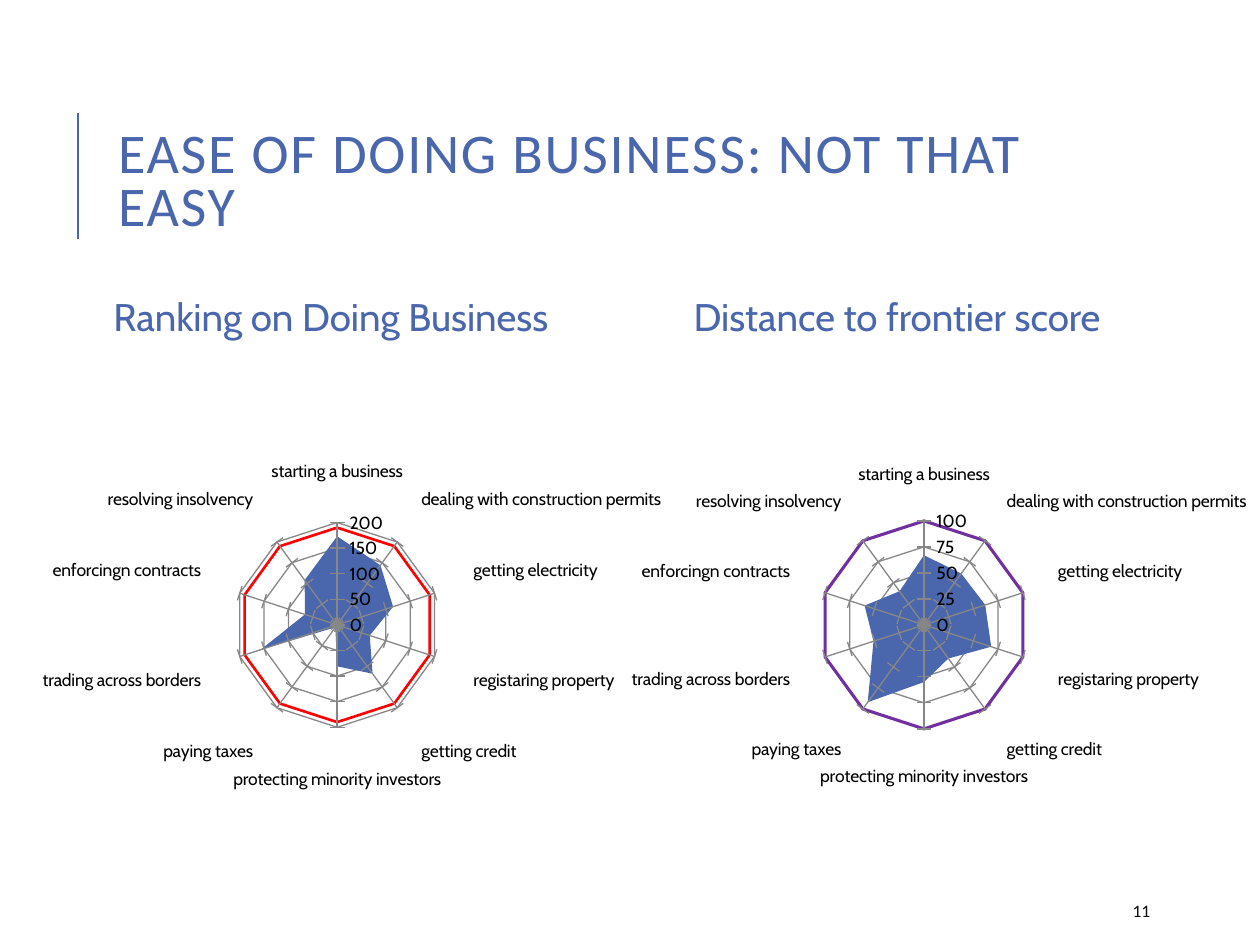
from pptx import Presentation
from pptx.chart.data import CategoryChartData
from pptx.dml.color import RGBColor
from pptx.enum.chart import XL_CHART_TYPE, XL_TICK_MARK
from pptx.enum.text import MSO_ANCHOR, PP_ALIGN
from pptx.oxml.ns import qn
from pptx.util import Inches, Pt
from lxml import etree

BLUE = RGBColor(0x4A, 0x66, 0xAC)
RED = RGBColor(0xFF, 0, 0)
PURPLE = RGBColor(0x70, 0x30, 0xA0)
GRAY = RGBColor(0x87, 0x87, 0x87)
BLACK = RGBColor(0, 0, 0)
DARK = RGBColor(0x0D, 0x0D, 0x0D)

TOPICS = [
    "starting a business", "dealing with construction permits",
    "getting electricity", "registaring property", "getting credit",
    "protecting minority investors", "paying taxes",
    "trading across borders", "enforcingn contracts",
    "resolving insolvency",
]
RANKS = [173, 144, 115, 67, 118, 81, 6, 157, 66, 108]
SCORES = [67, 61, 62, 68, 40, 55, 92, 51, 60, 40]


def assign(item, values):
    for name, value in values.items():
        setattr(item, name, value)


def add_text(slide, box, text, font, color, size, para=None, inset=0.1):
    frame = slide.shapes.add_textbox(*map(Inches, box)).text_frame
    assign(frame, {
        "word_wrap": True, "vertical_anchor": MSO_ANCHOR.MIDDLE,
        "margin_left": Inches(inset), "margin_right": Inches(inset),
    })
    line = frame.paragraphs[0]
    assign(line, para or {})
    run = line.add_run()
    run.text = text
    assign(run.font, {"name": font, "size": Pt(size)})
    run.font.color.rgb = color
    return run


def add_title(slide, box):
    run = add_text(slide, box, "EASE OF DOING BUSINESS: NOT THAT EASY",
                   "Calibri", BLUE, 32, {"line_spacing": 0.8})
    run.font._element.set("spc", "100")
    x = Inches(0.62)
    rule = slide.shapes.add_connector(1, x, Inches(1.9), x, Inches(0.9))
    rule.line.color.rgb = BLUE
    rule.line.width = Pt(1.5)
    etree.SubElement(rule._element.spPr, qn("a:effectLst"))


def add_head(slide, box, text, align):
    add_text(slide, box, text, "Cabin", BLUE, 22,
             {"line_spacing": 0.9, "alignment": align}, 0.15)


def add_radar(slide, box, values, limit, top, step, color, width, form):
    data = CategoryChartData()
    data.categories = TOPICS
    data.add_series("Series 1", values)
    data.add_series("Series 2", [limit] * len(TOPICS))
    chart = slide.shapes.add_chart(
        XL_CHART_TYPE.RADAR_FILLED, *map(Inches, box), data).chart
    assign(chart, {"has_legend": False, "has_title": False})
    assign(chart.font, {"name": "Cabin", "size": Pt(10)})
    chart.font.color.rgb = BLACK
    area, ring = chart.plots[0].series
    area.format.fill.solid()
    area.format.fill.fore_color.rgb = BLUE
    area.format.line.fill.background()
    ring.format.fill.background()
    ring.format.line.color.rgb = color
    ring.format.line.width = Pt(width)
    assign(chart.value_axis, {
        "minimum_scale": 0, "maximum_scale": top, "major_unit": step,
    })
    assign(chart.category_axis.tick_labels, {
        "number_format": form, "number_format_is_linked": False,
    })
    for axis in (chart.category_axis, chart.value_axis):
        assign(axis, {"has_major_gridlines": True,
                      "major_tick_mark": XL_TICK_MARK.CROSS,
                      "minor_tick_mark": XL_TICK_MARK.NONE})
        for line in (axis.format.line, axis.major_gridlines.format.line):
            line.color.rgb = GRAY
            line.width = Pt(0.75)


def main():
    deck = Presentation()
    assign(deck, {"slide_width": Inches(10), "slide_height": Inches(7.5)})
    slide = deck.slides.add_slide(deck.slide_layouts[6])
    add_title(slide, (0.84, 0.64, 7.97, 1.64))
    add_head(slide, (0.75, 2.08, 3.9, 0.9), "Ranking on Doing Business",
             PP_ALIGN.LEFT)
    add_radar(slide, (0.25, 2.42, 5.08, 5.08), RANKS, 190, 200, 50,
              RED, 1.5, "#,##0")
    add_head(slide, (5.17, 2.08, 3.9, 0.9), "Distance to frontier score",
             PP_ALIGN.CENTER)
    add_text(slide, (8.89, 7.08, 0.8, 0.3), "11", "Calibri", DARK, 10)
    add_radar(slide, (4.92, 2.67, 5.08, 4.58), SCORES, 100, 100, 25,
              PURPLE, 1.75, "General")
    deck.save("out.pptx")


if __name__ == "__main__":
    main()
